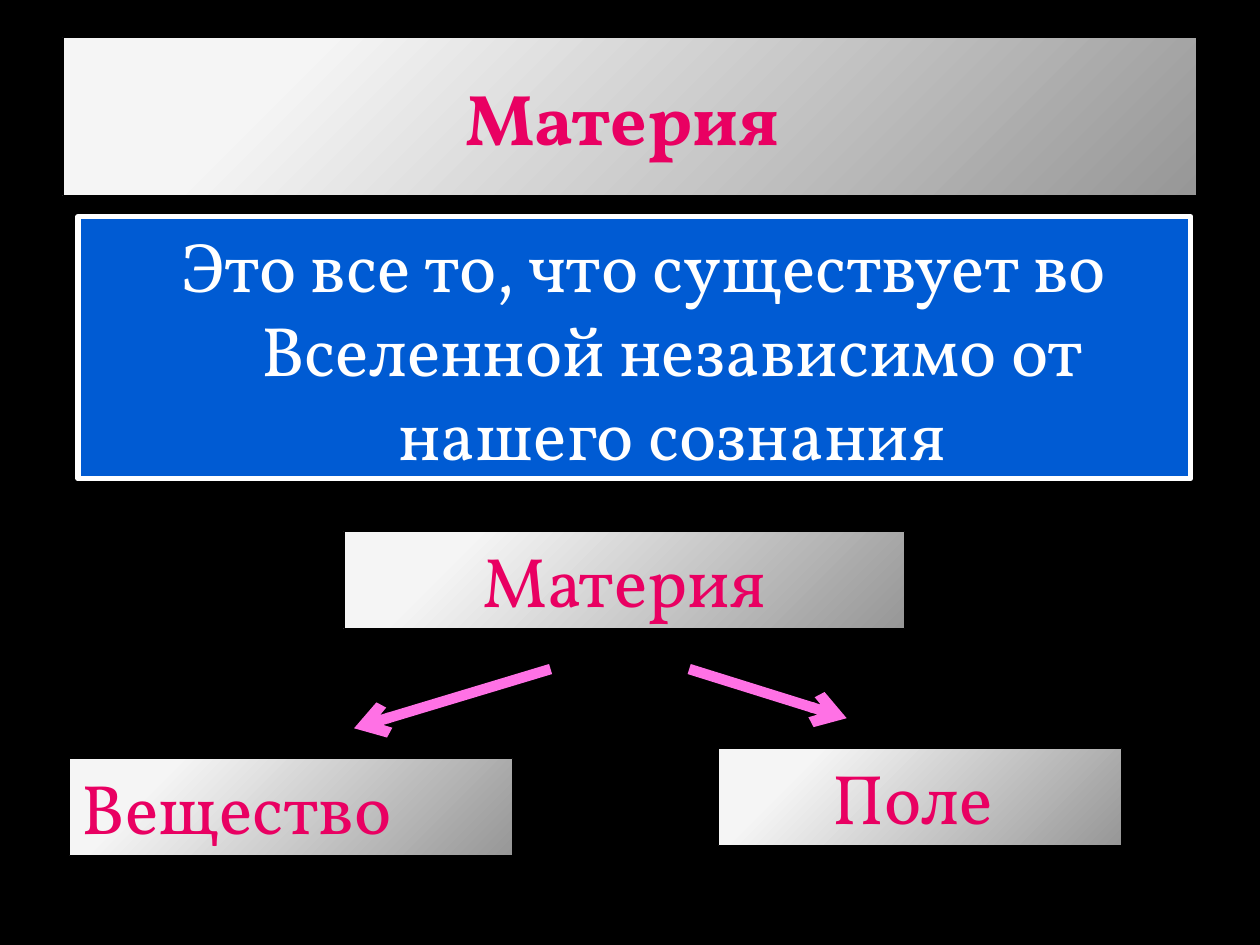
from lxml.etree import SubElement
from pptx import Presentation
from pptx.dml.color import RGBColor
from pptx.enum.shapes import MSO_CONNECTOR as Connector, MSO_SHAPE as Shape
from pptx.enum.text import MSO_ANCHOR as Anchor, MSO_AUTO_SIZE as AutoSize, PP_ALIGN as Align
from pptx.oxml.ns import qn
from pptx.util import Inches, Pt

WIDTH, HEIGHT = Inches(10), Inches(7.5)
BLACK = RGBColor(0x00, 0x00, 0x00)
WHITE = RGBColor(0xFF, 0xFF, 0xFF)
BLUE = RGBColor(0x00, 0x5B, 0xD3)
CRIMSON = RGBColor(0xE9, 0x00, 0x62)
PINK = RGBColor(0xFF, 0x71, 0xE5)
SILVER = RGBColor(0xF5, 0xF5, 0xF5)
GREY = RGBColor(0x97, 0x97, 0x97)
FONT = "Vollkorn"
LABEL_HEIGHT = 10.27


def across(percent):
    return round(WIDTH * percent / 100)


def down(percent):
    return round(HEIGHT * percent / 100)


def fill_silver(box):
    box.fill.gradient()
    stops = zip(box.fill.gradient_stops, (0.2, 1), (SILVER, GREY))
    for stop, position, color in stops:
        stop.position = position
        stop.color.rgb = color
    gradient = box._element.spPr.find(qn("a:gradFill"))
    gradient.remove(gradient.find(qn("a:lin")))
    radial = SubElement(gradient, qn("a:path"), path="circle")
    SubElement(radial, qn("a:fillToRect"), l="-15000", t="-15000", r="115000", b="115000")


def add_box(page, text, left, top, width, height, color=CRIMSON, size=40,
            align=Align.CENTER, anchor=Anchor.TOP):
    box = page.shapes.add_shape(
        Shape.RECTANGLE, across(left), down(top), across(width), down(height))
    box.shadow.inherit = False
    frame = box.text_frame
    frame.word_wrap = True
    frame.vertical_anchor = anchor
    para = frame.paragraphs[0]
    para.text = text
    para.alignment = align
    para.font.name = FONT
    para.font.size = Pt(size)
    para.font.color.rgb = color
    return box


def add_silver_box(page, *args, **options):
    box = add_box(page, *args, **options)
    fill_silver(box)
    box.line.color.rgb = BLACK
    box.line.width = Pt(0.75)
    return box


def add_title(page, text):
    box = add_silver_box(page, text, 5, 4, 90, 16.67, size=41, anchor=Anchor.MIDDLE)
    box.text_frame.paragraphs[0].font.bold = True


def add_definition(page, text):
    box = add_box(page, text, 6.2, 22.93, 88.3, 27.73, color=WHITE)
    box.fill.solid()
    box.fill.fore_color.rgb = BLUE
    box.line.color.rgb = WHITE
    box.line.width = Pt(3)
    para = box.text_frame.paragraphs[0]
    para.space_before = Pt(8)
    properties = para._p.get_or_add_pPr()
    properties.set("marL", str(Inches(0.6)))
    properties.set("indent", str(Inches(-0.45)))


def add_label(page, text, left, top, width, align=Align.CENTER):
    box = add_silver_box(page, text, left, top, width, LABEL_HEIGHT, align=align)
    box.text_frame.auto_size = AutoSize.SHAPE_TO_FIT_TEXT


def add_arrow(page, start, end):
    arrow = page.shapes.add_connector(
        Connector.STRAIGHT, across(start[0]), down(start[1]), across(end[0]), down(end[1]))
    arrow.line.color.rgb = PINK
    arrow.line.width = Pt(6)
    SubElement(arrow.line._get_or_add_ln(), qn("a:tailEnd"), type="arrow")
    SubElement(arrow._element.spPr, qn("a:effectLst"))


def main():
    deck = Presentation()
    deck.slide_width, deck.slide_height = WIDTH, HEIGHT
    page = deck.slides.add_slide(deck.slide_layouts[6])
    page.background.fill.solid()
    page.background.fill.fore_color.rgb = BLACK

    add_title(page, "Материя ")
    add_definition(page, "Это все то, что существует во Вселенной независимо от нашего сознания")
    add_label(page, "Материя", 27.3, 56.27, 44.5)
    add_label(page, "Вещество", 5.5, 80.27, 35.2, align=Align.LEFT)
    add_label(page, "Поле ", 57, 79.2, 32)
    add_arrow(page, (54.7, 70.8), (67.2, 76))
    add_arrow(page, (43.7, 70.8), (28.1, 77.07))
    deck.save("out.pptx")


if __name__ == "__main__":
    main()
